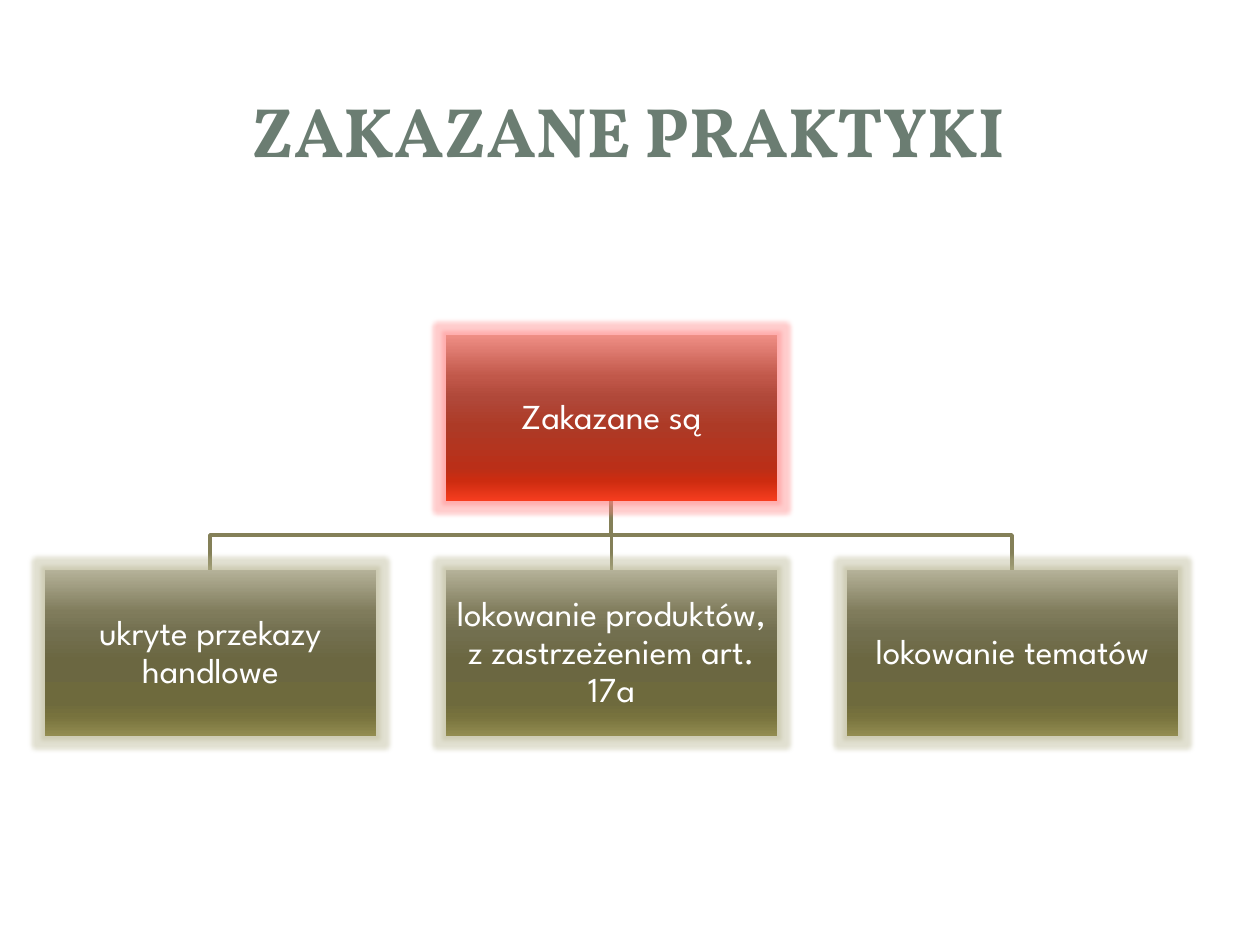
from lxml import etree
from pptx import Presentation
from pptx.dml.color import RGBColor
from pptx.enum.shapes import MSO_CONNECTOR as Connector, MSO_SHAPE as Shape
from pptx.enum.text import MSO_ANCHOR as Anchor, PP_ALIGN as Align
from pptx.oxml.ns import qn
from pptx.util import Pt

PX = 914400 // 126
WHITE = RGBColor(0xFF, 0xFF, 0xFF)
TITLE_GREEN = RGBColor(0x6B, 0x7D, 0x72)
LINE_OLIVE = RGBColor(0x84, 0x80, 0x58)
RED_GLOW = RGBColor(0xFF, 0x80, 0x80)
OLIVE_GLOW = RGBColor(0xB5, 0xB2, 0x8C)

STOPS = (0, 25, 38, 55, 80, 88, 100)
RED = [RGBColor.from_string(code) for code in
       "EF8E85 C1584A B04839 AD3A26 BA2F18 CD2C10 F63D1F".split()]
OLIVE = [RGBColor.from_string(code) for code in
         "B5B299 807C5C 726F4F 6B6741 6E6A3D 77723D 928C50".split()]

BOX_WIDTH, BOX_HEIGHT = 331, 166
LEFT, STEP = 45, 401
ROOT_TOP, CHILD_TOP = 335, 570
CHILDREN = (
    "ukryte przekazy handlowe",
    "lokowanie produktów, z zastrzeżeniem art. 17a",
    "lokowanie tematów",
)


def add_color(parent, color, alpha=None):
    element = etree.SubElement(parent, qn("a:srgbClr"), val=str(color))
    if alpha is not None:
        etree.SubElement(element, qn("a:alpha"), val=str(alpha * 1000))


class SlideBuilder:
    title_font, body_font = "Vollkorn", "League Spartan"

    def __init__(self, slide):
        self.slide = slide

    def add_text(self, shape, text, font, size, color, bold=False):
        frame = shape.text_frame
        frame.word_wrap = True
        frame.vertical_anchor = Anchor.MIDDLE
        paragraph = frame.paragraphs[0]
        paragraph.alignment = Align.CENTER
        run = paragraph.add_run()
        run.text = text
        run.font.name, run.font.size, run.font.bold = font, Pt(size), bold
        run.font.color.rgb = color
        return frame

    def title(self, text, left, top, width, height):
        box = self.slide.shapes.add_textbox(left * PX, top * PX, width * PX, height * PX)
        self.add_text(box, text, self.title_font, 40, TITLE_GREEN, bold=True)

    def box(self, text, left, top, colors, glow_color):
        """Add a rectangle with a downward gradient and a soft glow."""
        shape = self.slide.shapes.add_shape(
            Shape.RECTANGLE, left * PX, top * PX, BOX_WIDTH * PX, BOX_HEIGHT * PX)
        shape.fill.gradient()
        shape.fill.gradient_angle = 270
        shape.line.fill.background()
        shape.shadow.inherit = False
        properties = shape._element.spPr
        stop_list = properties.find(qn("a:gradFill")).find(qn("a:gsLst"))
        for stop in list(stop_list):
            stop_list.remove(stop)
        for position, color in zip(STOPS, colors):
            stop = etree.SubElement(stop_list, qn("a:gs"), pos=str(position * 1000))
            add_color(stop, color)
        effects = properties.find(qn("a:effectLst"))
        glow = etree.SubElement(effects, qn("a:glow"), rad=str(int(Pt(5))))
        add_color(glow, glow_color, 40)

        frame = self.add_text(shape, text, self.body_font, 20, WHITE)
        frame.paragraphs[0].line_spacing = 0.9
        frame.margin_left = frame.margin_right = PX
        frame.margin_top = frame.margin_bottom = PX
        return shape

    def style_line(self, shape):
        shape.line.color.rgb = LINE_OLIVE
        shape.line.width = Pt(2)

    def elbow(self, start_x, start_y, end_x, end_y):
        middle = (start_y + end_y) // 2
        builder = self.slide.shapes.build_freeform(start_x, start_y, scale=PX)
        builder.add_line_segments(
            [(start_x, middle), (end_x, middle), (end_x, end_y)], close=False)
        shape = builder.convert_to_shape()
        shape.fill.background()
        shape.shadow.inherit = False
        self.style_line(shape)

    def straight(self, x, start_y, end_y):
        connector = self.slide.shapes.add_connector(
            Connector.STRAIGHT, x * PX, start_y * PX, x * PX, end_y * PX)
        self.style_line(connector)
        etree.SubElement(connector._element.spPr, qn("a:effectLst"))
        return connector


def main():
    presentation = Presentation()
    presentation.slide_width, presentation.slide_height = 1260 * PX, 945 * PX
    builder = SlideBuilder(presentation.slides.add_slide(presentation.slide_layouts[6]))
    builder.title("ZAKAZANE PRAKTYKI", 59, 57, 1138, 144)

    root_left = LEFT + STEP
    center = root_left + BOX_WIDTH // 2
    root_bottom = ROOT_TOP + BOX_HEIGHT
    builder.elbow(center, root_bottom, center + STEP, CHILD_TOP)
    trunk = builder.straight(center, root_bottom, CHILD_TOP)
    builder.elbow(center, root_bottom, center - STEP, CHILD_TOP)

    root = builder.box("Zakazane są", root_left, ROOT_TOP, RED, RED_GLOW)
    children = [builder.box(text, LEFT + index * STEP, CHILD_TOP, OLIVE, OLIVE_GLOW)
                for index, text in enumerate(CHILDREN)]
    trunk.begin_connect(root, 2)
    trunk.end_connect(children[1], 0)
    presentation.save("out.pptx")


if __name__ == "__main__":
    main()
